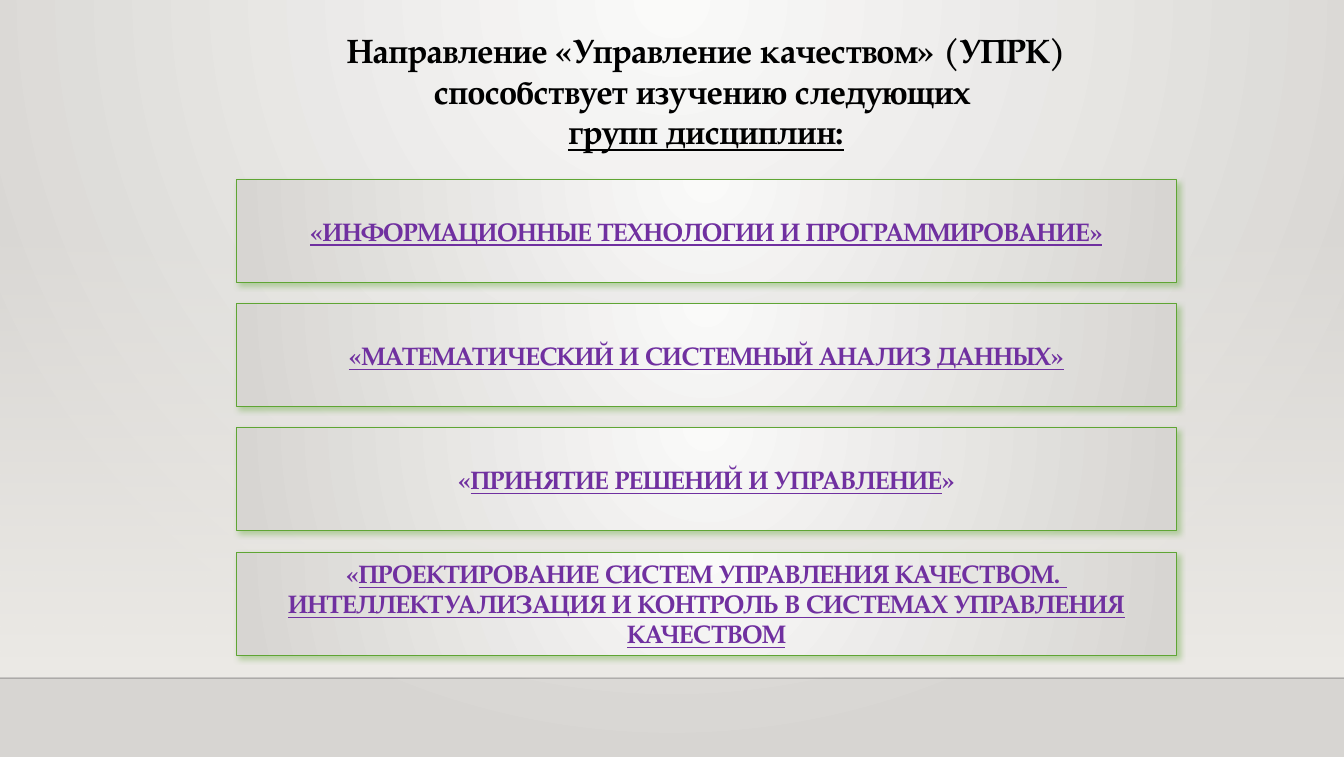
import pptx
import pptx.util
import pptx.dml.color
import pptx.enum.shapes
import pptx.enum.text
import pptx.oxml
import pptx.oxml.ns
from pptx.util import Inches

FONT = "TeX Gyre Pagella"
COLORS = {
    "light": "FAFAF9",
    "shade": "D7D5D2",
    "wall": "EDEBE7",
    "floor_line": "000001",
    "green": "5FA534",
    "purple": "7030A0",
    "black": "000000",
}

HEADING = [
    [("Направление «Управление качеством» (УПРК)", False)],
    [("способствует изучению следующих ", False)],
    [("групп дисциплин:", True)],
]
DISCIPLINES = [
    [[("«ИНФОРМАЦИОННЫЕ ТЕХНОЛОГИИ И ПРОГРАММИРОВАНИЕ»", True)]],
    [[("«МАТЕМАТИЧЕСКИЙ И СИСТЕМНЫЙ АНАЛИЗ ДАННЫХ»", True)]],
    [[("«", False), ("ПРИНЯТИЕ РЕШЕНИЙ И УПРАВЛЕНИЕ", True), ("»", False)]],
    [
        [("«", False), ("ПРОЕКТИРОВАНИЕ СИСТЕМ УПРАВЛЕНИЯ КАЧЕСТВОМ. ", True)],
        [("ИНТЕЛЛЕКТУАЛИЗАЦИЯ И КОНТРОЛЬ В СИСТЕМАХ УПРАВЛЕНИЯ КАЧЕСТВОМ", True)],
    ],
]

SLIDE_W, SLIDE_H = 13.32, 7.5
WALL_TOP, WALL_H, FLOOR_Y = 2.2, 4.5, 6.72
BOX_LEFT, BOX_TOP, BOX_W, BOX_H, BOX_STEP = 2.34, 1.78, 9.32, 1.02, 1.23


def rgb(name):
    return pptx.dml.color.RGBColor.from_string(COLORS[name])


def xml(tag, attributes="", inner=""):
    return pptx.oxml.parse_xml(
        f'<a:{tag} {pptx.oxml.ns.nsdecls("a")} {attributes}>{inner}</a:{tag}>'
    )


def set_gradient(fill, start, end):
    fill.gradient()
    for stop, name in zip(fill.gradient_stops, (start, end)):
        stop.color.rgb = rgb(name)


def set_glow(fill, owner):
    set_gradient(fill, "light", "shade")
    gradient = owner.find(".//" + pptx.oxml.ns.qn("a:gradFill"))
    direction = gradient.find(pptx.oxml.ns.qn("a:lin"))
    center = '<a:fillToRect l="43000" t="0" r="43000" b="100000"/>'
    gradient.replace(direction, xml("path", 'path="circle"', center))


def set_opacity(owner, percent):
    color = owner.find(".//" + pptx.oxml.ns.qn("a:srgbClr"))
    color.append(xml("alpha", f'val="{percent * 1000}"'))


def write(frame, lines, size, color, anchor):
    frame.word_wrap = True
    frame.auto_size = pptx.enum.text.MSO_AUTO_SIZE.NONE
    frame.vertical_anchor = anchor
    for index, line in enumerate(lines):
        paragraph = frame.add_paragraph() if index else frame.paragraphs[0]
        paragraph.alignment = pptx.enum.text.PP_ALIGN.CENTER
        for text, underlined in line:
            run = paragraph.add_run()
            run.text = text
            run.font.name = FONT
            run.font.size = pptx.util.Pt(size)
            run.font.bold = True
            run.font.underline = underlined
            run.font.color.rgb = rgb(color)


def add_rectangle(slide, left, top, width, height):
    return slide.shapes.add_shape(
        pptx.enum.shapes.MSO_SHAPE.RECTANGLE,
        Inches(left), Inches(top), Inches(width), Inches(height),
    )


def add_backdrop(slide):
    set_glow(slide.background.fill, slide._element)
    wall = add_rectangle(slide, 0, WALL_TOP, SLIDE_W, WALL_H)
    wall.shadow.inherit = False
    wall.line.fill.background()
    set_gradient(wall.fill, "wall", "wall")
    wall.fill.gradient_angle = 270
    set_opacity(wall._element.spPr, 0)

    floor = slide.shapes.add_connector(
        pptx.enum.shapes.MSO_CONNECTOR.STRAIGHT,
        0, Inches(FLOOR_Y), Inches(SLIDE_W), Inches(FLOOR_Y),
    )
    floor.line.width = pptx.util.Pt(1)
    floor.line.color.rgb = rgb("floor_line")
    set_opacity(floor._element.spPr, 20)
    floor._element.spPr.append(xml("effectLst"))


def add_heading(slide):
    heading = slide.shapes.title
    heading.left, heading.top = Inches(0.69), Inches(0.25)
    heading.width, heading.height = Inches(12.62), Inches(1.31)
    write(heading.text_frame, HEADING, 24, "black", pptx.enum.text.MSO_ANCHOR.TOP)
    slide.shapes._spTree.append(heading._element)


def add_discipline(slide, top, lines):
    box = add_rectangle(slide, BOX_LEFT, top, BOX_W, BOX_H)
    set_glow(box.fill, box._element.spPr)
    box.line.color.rgb = rgb("green")
    box.line.width = pptx.util.Pt(0.75)
    shadow_color = f'<a:srgbClr val="{COLORS["green"]}"><a:alpha val="40000"/></a:srgbClr>'
    shadow = (
        f'<a:outerShdw blurRad="{pptx.util.Pt(4)}" dist="{pptx.util.Pt(3)}" '
        f'dir="2700000" algn="tl" rotWithShape="0">{shadow_color}</a:outerShdw>'
    )
    box._element.spPr.append(xml("effectLst", inner=shadow))
    write(box.text_frame, lines, 18, "purple", pptx.enum.text.MSO_ANCHOR.MIDDLE)


def main():
    deck = pptx.Presentation()
    deck.slide_width, deck.slide_height = Inches(SLIDE_W), Inches(SLIDE_H)
    slide = deck.slides.add_slide(deck.slide_layouts.get_by_name("Title Only"))
    add_backdrop(slide)
    add_heading(slide)
    for index, lines in enumerate(DISCIPLINES):
        add_discipline(slide, BOX_TOP + index * BOX_STEP, lines)
    deck.save("out.pptx")


if __name__ == "__main__":
    main()
